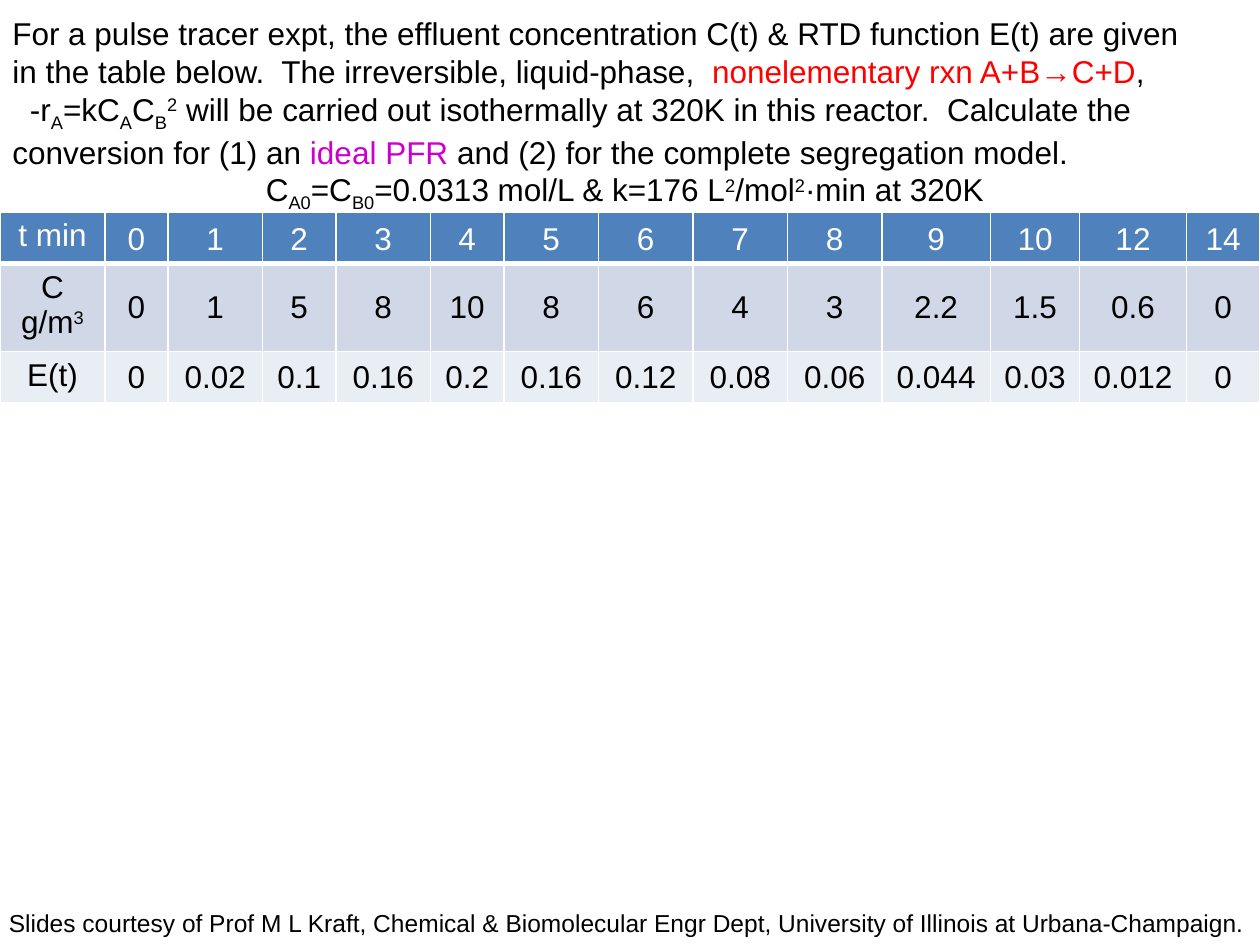
from dataclasses import dataclass

from lxml.etree import SubElement
from pptx import Presentation
from pptx.dml.color import RGBColor
from pptx.enum.text import MSO_ANCHOR, MSO_AUTO_SIZE, PP_ALIGN
from pptx.oxml.ns import qn
from pptx.util import Pt


@dataclass(frozen=True)
class Theme:
    font: str = "Arial"
    body: int = 18
    credit: int = 14
    black: str = "000000"
    white: str = "FFFFFF"
    red: str = "FF0000"
    purple: str = "CC00CC"
    header: str = "4F81BD"
    bands: tuple = ("D0D8E8", "E9EDF4")


T = Theme()
SUB, SUP = -25, 30  # baseline shift in percent

# Each paragraph: paragraph format, first-line indent, runs of (text, colour, baseline)
PROBLEM = [
    ({}, 0, [("For a pulse tracer expt, the effluent concentration C(t) & RTD function E(t) are given",)]),
    ({}, 0, [("in the table below.  The irreversible, liquid-phase,  ",),
             ("nonelementary rxn A+B→C+D", T.red), (",",)]),
    ({}, 10, [("-r",), ("A", T.black, SUB), ("=kC",), ("A", T.black, SUB), ("C",),
              ("B", T.black, SUB), ("2", T.black, SUP),
              (" will be carried out isothermally at 320K in this reactor.  Calculate the "
               "conversion for (1) an ",),
              ("ideal PFR ", T.purple), ("and (2) for the complete segregation model.",)]),
    ({"alignment": PP_ALIGN.CENTER}, 0,
     [("C",), ("A0", T.black, SUB), ("=C",), ("B0", T.black, SUB),
      ("=0.0313 mol/L & k=176 L",), ("2", T.black, SUP), ("/mol",),
      ("2", T.black, SUP), ("·min at 320K",)]),
]
CREDIT = [({}, 0, [("Slides courtesy of Prof M L Kraft, Chemical & Biomolecular Engr Dept, "
                    "University of Illinois at Urbana-Champaign.",)])]

LABELS = [[("t min", T.white)], [("C g/m",), ("3", T.black, SUP)], [("E(t)",)]]
VALUES = ["0 1 2 3 4 5 6 7 8 9 10 12 14",
          "0 1 5 8 10 8 6 4 3 2.2 1.5 0.6 0",
          "0 0.02 0.1 0.16 0.2 0.16 0.12 0.08 0.06 0.044 0.03 0.012 0"]
COLUMNS = [60, 36, 54, 42, 54, 42, 54, 54, 54, 54, 62, 51, 61, 42]
ROW_HEIGHT = 29.5


def apply(obj, fmt):
    for name, value in fmt.items():
        setattr(obj, name, value)


def add_run(p, text, size, color=T.black, baseline=0):
    r = p.add_run()
    r.text = text
    apply(r.font, {"name": T.font, "size": Pt(size), "bold": False})
    r.font.color.rgb = RGBColor.from_string(color)
    if baseline:
        r._r.get_or_add_rPr().set("baseline", str(baseline * 1000))


def add_text(s, box, paragraphs, size, wrap=True):
    tf = s.shapes.add_textbox(*map(Pt, box)).text_frame
    apply(tf, {"word_wrap": wrap, "auto_size": MSO_AUTO_SIZE.SHAPE_TO_FIT_TEXT})
    for i, (fmt, indent, runs) in enumerate(paragraphs):
        p = tf.add_paragraph() if i else tf.paragraphs[0]
        apply(p, fmt)
        if indent:
            p._p.get_or_add_pPr().set("indent", str(Pt(indent)))
        for run in runs:
            add_run(p, run[0], size, *run[1:])


def add_borders(cell):
    """White rules around a header cell, heavier below."""
    tcPr = cell._tc.get_or_add_tcPr()
    for i, (side, width) in enumerate({"L": 1, "R": 1, "T": 1, "B": 3}.items()):
        ln = SubElement(tcPr, qn(f"a:ln{side}"), w=str(Pt(width)))
        SubElement(SubElement(ln, qn("a:solidFill")), qn("a:srgbClr"), val=T.white)
        tcPr.insert(i, ln)


def add_tracer_table(s, box):
    table = s.shapes.add_table(len(LABELS), len(COLUMNS), *map(Pt, box)).table
    for column, width in zip(table.columns, COLUMNS):
        column.width = Pt(width)
    for i, (label, values) in enumerate(zip(LABELS, VALUES)):
        table.rows[i].height = Pt(ROW_HEIGHT)
        is_header = i == 0
        fill = T.header if is_header else T.bands[i - 1]
        color = T.white if is_header else T.black
        anchor = MSO_ANCHOR.BOTTOM if is_header else MSO_ANCHOR.MIDDLE
        contents = [label] + [[(v, color)] for v in values.split()]
        for j, runs in enumerate(contents):
            cell = table.cell(i, j)
            cell.vertical_anchor = anchor if j else MSO_ANCHOR.TOP
            cell.fill.solid()
            cell.fill.fore_color.rgb = RGBColor.from_string(fill)
            if is_header:
                add_borders(cell)
            p = cell.text_frame.paragraphs[0]
            p.alignment = PP_ALIGN.CENTER
            for run in runs:
                add_run(p, run[0], T.body, *run[1:])


def main():
    prs = Presentation()
    prs.slide_width, prs.slide_height = Pt(720), Pt(540)
    s = prs.slides.add_slide(prs.slide_layouts[6])
    # Credit line at the foot
    add_text(s, (-2, 515.5, 724, 24.5), CREDIT, T.credit, wrap=False)
    # Tracer data
    add_tracer_table(s, (0, 121, 720, 3 * ROW_HEIGHT))
    # Problem statement
    add_text(s, (0, 4.5, 714, 116.5), PROBLEM, T.body)
    prs.save("out.pptx")


if __name__ == "__main__":
    main()
